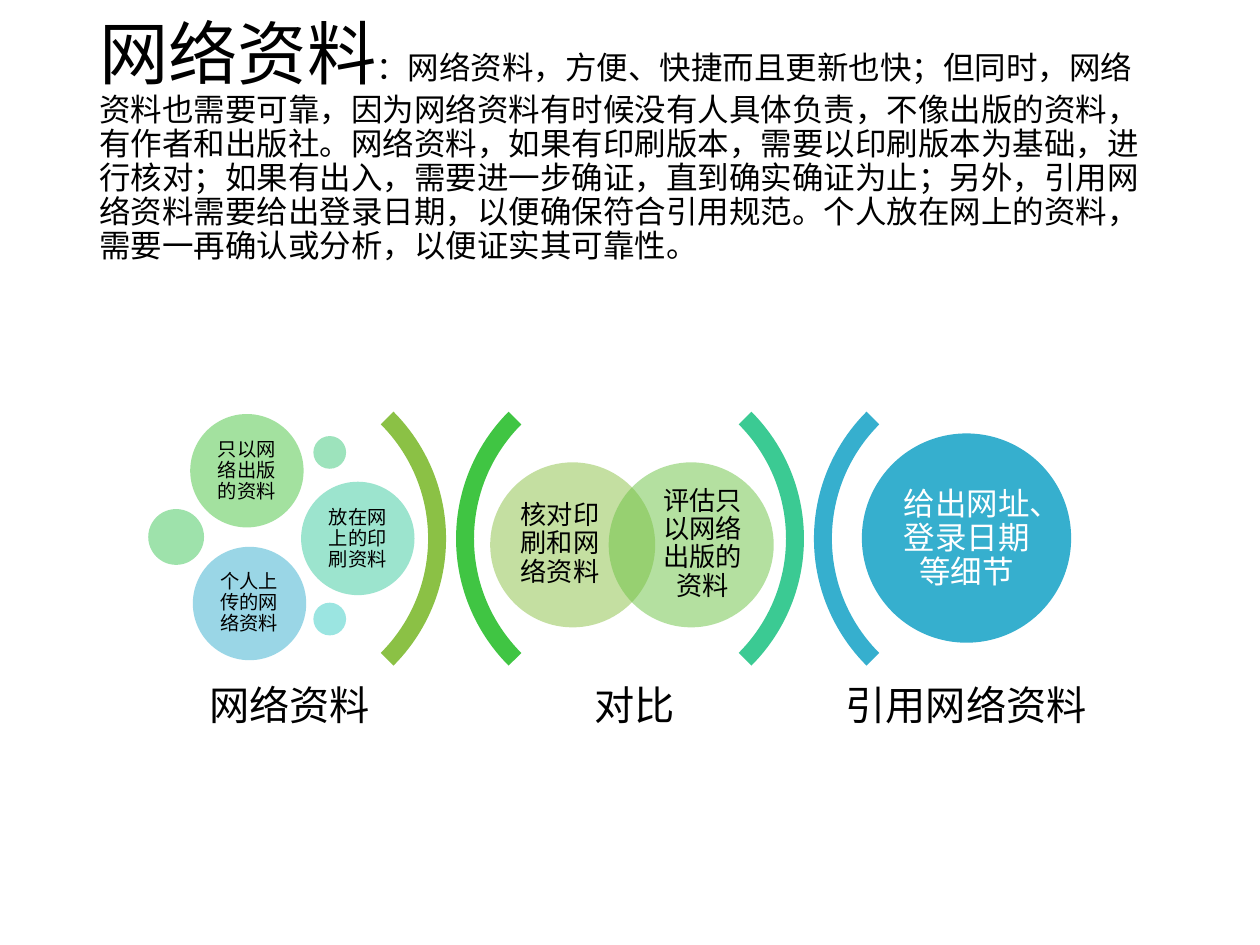
import pptx
import pptx.dml.color
import pptx.enum.shapes
import pptx.enum.text
import pptx.oxml
import pptx.oxml.ns
import pptx.util

Pt = pptx.util.Pt
SHAPES = pptx.enum.shapes.MSO_SHAPE
ALIGN = pptx.enum.text.PP_ALIGN
ANCHOR = pptx.enum.text.MSO_ANCHOR
COLORS = {
    "black": "000000", "white": "FFFFFF", "olive": "8BC145", "green": "40C543",
    "jade": "3BCA93", "blue": "36AFCE", "leaf": "6BC343", "grass": "49C541",
    "mint": "3FC759", "sea": "3CC87B", "teal": "3ACA9F", "aqua": "38CCC5",
}


def add_filled(kind, left, top, size, color, alpha=100):
    shape = page.shapes.add_shape(kind, Pt(left), Pt(top), Pt(size), Pt(size))
    shape.shadow.inherit = False
    shape.line.fill.background()
    shape.fill.solid()
    shape.fill.fore_color.rgb = pptx.dml.color.RGBColor.from_string(COLORS[color])
    if alpha < 100:
        rgb = shape.fill._xPr.find(".//" + pptx.oxml.ns.qn("a:srgbClr"))
        rgb.append(pptx.oxml.parse_xml(
            f'<a:alpha {pptx.oxml.ns.nsdecls("a")} val="{alpha * 1000}"/>'))
    return shape


def write_text(box, runs, color, align, inset):
    frame = box.text_frame
    margins = {f"margin_{side}": Pt(inset) for side in ("left", "top", "right", "bottom")}
    layout = {"word_wrap": True, "auto_size": pptx.enum.text.MSO_AUTO_SIZE.NONE,
              "vertical_anchor": ANCHOR.MIDDLE}
    for name, value in {**margins, **layout}.items():
        setattr(frame, name, value)
    para = frame.paragraphs[0]
    para.alignment = align
    para.line_spacing = 0.9
    for text, size in runs:
        span = para.add_run()
        span.text = text
        for name, value in {"name": "Times New Roman", "size": Pt(size)}.items():
            setattr(span.font, name, value)
        span.font.color.rgb = pptx.dml.color.RGBColor.from_string(COLORS[color])


deck = pptx.Presentation()
deck.slide_width, deck.slide_height = Pt(720), Pt(540)
page = deck.slides.add_slide(deck.slide_layouts[5])

title = page.shapes.title
title.left, title.top, title.width, title.height = Pt(49.5), Pt(28.75), Pt(621), Pt(104.4)
write_text(title, [
    ("网络资料", 39.6),
    ("：网络资料，方便、快捷而且更新也快；但同时，网络资料也需要可靠，因为网络资料有时候没有人具体负责，"
     "不像出版的资料，有作者和出版社。网络资料，如果有印刷版本，需要以印刷版本为基础，进行核对；"
     "如果有出入，需要进一步确证，直到确实确证为止；另外，引用网络资料需要给出登录日期，"
     "以便确保符合引用规范。个人放在网上的资料，需要一再确认或分析，以便证实其可靠性。", 18),
], "black", ALIGN.LEFT, 7.2)

for left, rotation, color in [(49.7, 90, "olive"), (260.6, 270, "green"),
                              (254.2, 90, "jade"), (465.1, 270, "blue")]:
    arc = add_filled(SHAPES.BLOCK_ARC, left, 205.2, 205.2, color)
    arc.rotation = rotation
    for index, value in enumerate((135, 189, 0.05)):
        arc.adjustments[index] = value

for left, top, size, color, alpha in [
    (280.1, 264.2, 94.3, "olive", 50),
    (347.8, 264.2, 94.3, "leaf", 50),
    (108.7, 236.6, 64.8, "grass", 50),
    (84.7, 290.9, 31.9, "mint", 50),
    (179.1, 249.2, 18.7, "sea", 50),
    (172.1, 275.3, 64.8, "teal", 50),
    (179.1, 344.4, 18.7, "aqua", 50),
    (110.2, 312.5, 64.8, "blue", 50),
    (492.5, 247.7, 119.6, "blue", 100),
]:
    add_filled(SHAPES.OVAL, left, top, size, color, alpha)

STYLES = {
    "label": {"width": 155.5, "height": 41, "size": 23, "color": "black", "inset": 7.2},
    "small": {"width": 46, "height": 46, "size": 11, "color": "black", "inset": 3.6},
    "middle": {"width": 54, "height": 72, "size": 15, "color": "black", "inset": 0},
    "large": {"width": 85, "height": 85, "size": 18, "color": "white", "inset": 5},
}
for text, style_name, left, top in [
    ("网络资料", "label", 87.8, 383.8),
    ("对比", "label", 285.1, 383.8),
    ("引用网络资料", "label", 474.5, 383.8),
    ("只以网络出版的资料", "small", 118.1, 246.2),
    ("放在网上的印刷资料", "small", 181.4, 285.1),
    ("个人上传的网络资料", "small", 119.5, 321.8),
    ("核对印刷和网络资料", "middle", 293, 275),
    ("评估只以网络出版的资料", "middle", 374.4, 275),
    ("给出网址、登录日期等细节", "large", 509.8, 265.7),
]:
    style = STYLES[style_name]
    box = page.shapes.add_textbox(Pt(left), Pt(top), Pt(style["width"]), Pt(style["height"]))
    write_text(box, [(text, style["size"])], style["color"], ALIGN.CENTER, style["inset"])

deck.save("out.pptx")
